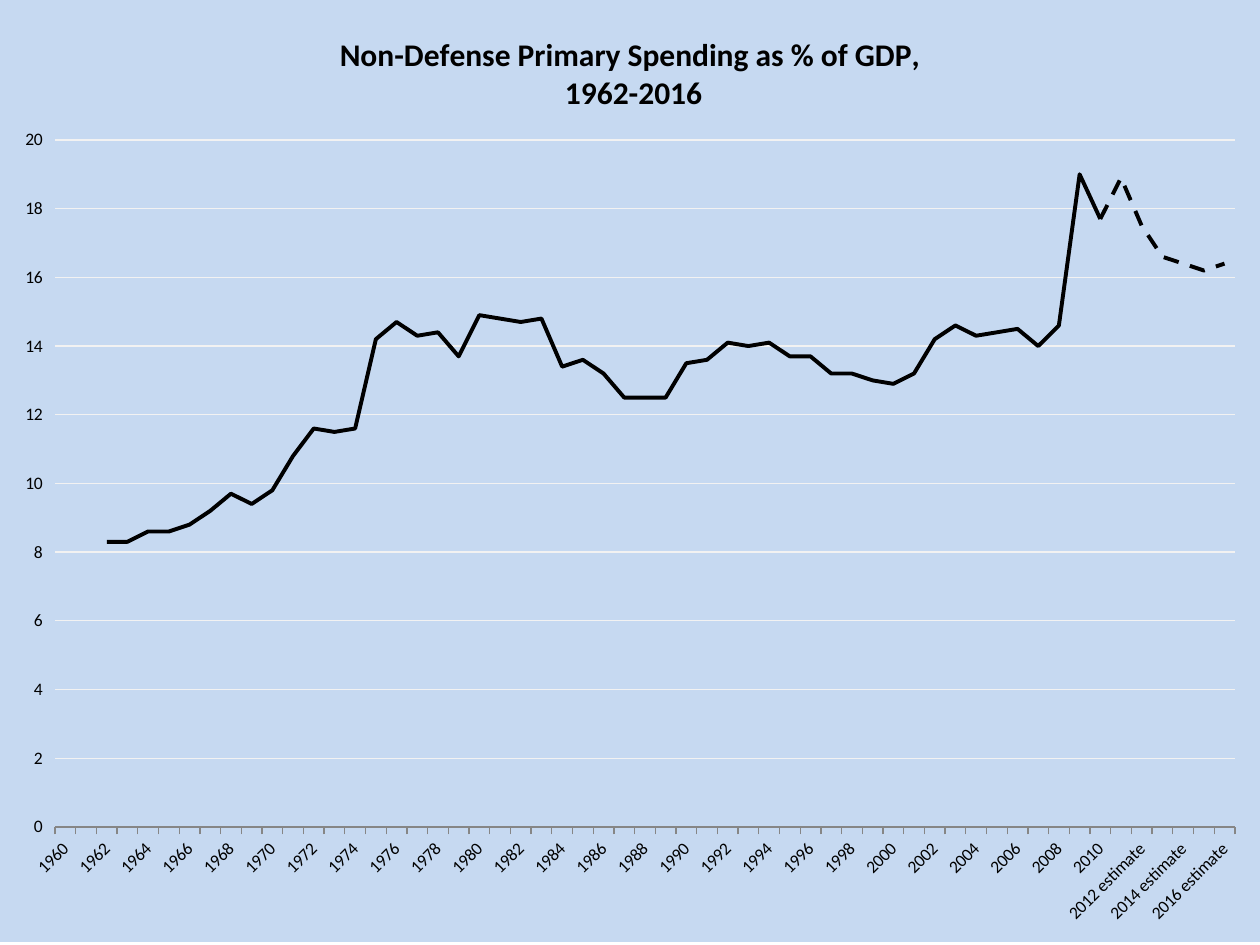
"""Build a slide with a line chart of non-defense primary spending."""
from lxml.etree import SubElement
from pptx import Presentation
from pptx.chart.data import CategoryChartData
from pptx.dml.color import RGBColor
from pptx.enum.chart import XL_CHART_TYPE, XL_TICK_MARK
from pptx.enum.dml import MSO_LINE
from pptx.oxml import parse_xml
from pptx.oxml.ns import nsdecls, qn
from pptx.util import Emu, Pt

PX = 914400 / 126
WIDTH, HEIGHT = 1260, 945
COLORS = {"background": "C6D9F1", "ink": "000000", "grid": "F2F2F2", "axis": "868686"}
FONT = "Calibri"


def write(paragraph, text, size=18, bold=True, color="ink"):
    run = paragraph.add_run()
    run.text = text
    run.font.name, run.font.size, run.font.bold = FONT, Pt(size), bold
    run.font.color.rgb = RGBColor.from_string(COLORS[color])


def place(parent, index, **settings):
    for old in parent.findall(qn("c:layout")):
        parent.remove(old)
    layout = parse_xml(f"<c:layout {nsdecls('c')}><c:manualLayout/></c:layout>")
    for tag, value in settings.items():
        SubElement(layout[0], qn(f"c:{tag}")).set("val", str(value))
    parent.insert(index, layout)


presentation = Presentation()
presentation.slide_width, presentation.slide_height = Emu(round(WIDTH * PX)), Emu(round(HEIGHT * PX))
slide = presentation.slides.add_slide(presentation.slide_layouts[6])

years = ["1960", ""] + [str(year) for year in range(1962, 2011)]
estimate_years = [f"{year} estimate" for year in range(2011, 2017)]
actual = [
    8.3, 8.3, 8.6, 8.6, 8.8, 9.2, 9.7, 9.4, 9.8, 10.8, 11.6, 11.5, 11.6, 14.2, 14.7, 14.3, 14.4,
    13.7, 14.9, 14.8, 14.7, 14.8, 13.4, 13.6, 13.2, 12.5, 12.5, 12.5, 13.5, 13.6, 14.1, 14, 14.1,
    13.7, 13.7, 13.2, 13.2, 13, 12.9, 13.2, 14.2, 14.6, 14.3, 14.4, 14.5, 14, 14.6, 19, 17.7,
]
estimated = [17.7, 18.9, 17.5, 16.6, 16.4, 16.2, 16.4]

spending = CategoryChartData()
spending.categories = years + estimate_years
spending.add_series("Series 1", [None] * 2 + actual + [None] * len(estimate_years))
spending.add_series("Series 2", [None] * (len(years) - 1) + estimated)
left, top, width, height = (Emu(round(v * PX)) for v in (0, -3, WIDTH, HEIGHT))
chart = slide.shapes.add_chart(XL_CHART_TYPE.LINE, left, top, width, height, spending).chart
chart.has_legend = False
chart.font.name, chart.font.size = FONT, Pt(10)
chart.font.color.rgb = RGBColor.from_string(COLORS["ink"])

chart.has_title = True
heading = chart.chart_title.text_frame
write(heading.paragraphs[0], "Non-Defense Primary Spending as % of GDP, ")
write(heading.add_paragraph(), "1962-2016")

plot = chart.plots[0]
plot.vary_by_categories = False
for series, dash in zip(plot.series, (MSO_LINE.SOLID, MSO_LINE.DASH)):
    series.smooth = False
    series.format.line.width = Pt(2.25)
    series.format.line.color.rgb = RGBColor.from_string(COLORS["ink"])
    series.format.line.dash_style = dash

percent_axis = chart.value_axis
percent_axis.minimum_scale, percent_axis.maximum_scale, percent_axis.major_unit = 0, 20, 2
percent_axis.major_tick_mark = XL_TICK_MARK.OUTSIDE
percent_axis.format.line.fill.background()
gridline = percent_axis.major_gridlines.format.line
gridline.width = Pt(0.75)
gridline.color.rgb = RGBColor.from_string(COLORS["grid"])

year_axis = chart.category_axis
year_axis.major_tick_mark = XL_TICK_MARK.OUTSIDE
year_axis.format.line.width = Pt(0.75)
year_axis.format.line.color.rgb = RGBColor.from_string(COLORS["axis"])
year_axis.tick_labels.font.size = Pt(10)
year_axis_xml = year_axis._element
year_axis_xml.find(qn("c:txPr")).find(qn("a:bodyPr")).set("rot", "-2700000")
for tag, step in (("tickLblSkip", 2), ("tickMarkSkip", 1)):
    skip = parse_xml(f'<c:{tag} {nsdecls("c")} val="{step}"/>')
    year_axis_xml.find(qn("c:noMultiLvlLbl")).addprevious(skip)

chart_xml = chart._chartSpace.find(qn("c:chart"))
plot_area = chart_xml.find(qn("c:plotArea"))
place(chart_xml.find(qn("c:title")), 1, xMode="edge", yMode="edge", x=336 / WIDTH, y=33 / HEIGHT)
place(plot_area, 0, layoutTarget="inner", xMode="edge", yMode="edge",
      x=55 / WIDTH, y=143 / HEIGHT, w=1180 / WIDTH, h=687 / HEIGHT)
background = (
    f'<c:spPr {nsdecls("c", "a")}><a:solidFill><a:srgbClr val="{COLORS["background"]}"/>'
    "</a:solidFill><a:ln><a:noFill/></a:ln></c:spPr>"
)
plot_area.append(parse_xml(background))
chart_xml.addnext(parse_xml(background))

presentation.save("out.pptx")
